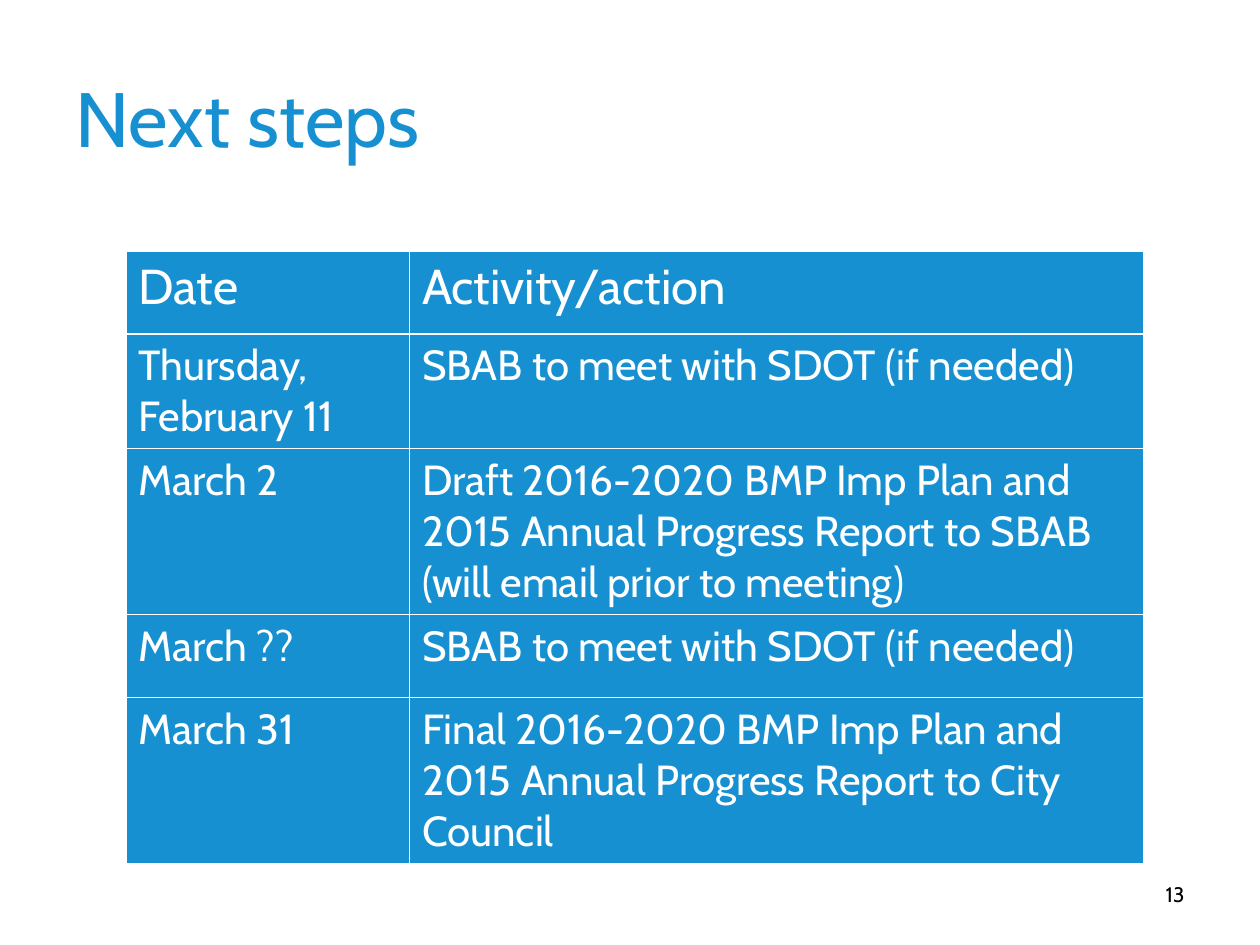
from lxml.etree import SubElement
from pptx import Presentation
from pptx.dml.color import RGBColor
from pptx.enum.text import MSO_ANCHOR, PP_ALIGN
from pptx.oxml.ns import qn
from pptx.util import Inches, Pt

TITLE = "Next steps"
PAGE_NUMBER = "13"
STEPS = [
    ("Date", "Activity/action"),
    ("Thursday, February 11", "SBAB to meet with SDOT (if needed)"),
    ("March 2", "Draft 2016-2020 BMP Imp Plan and 2015 Annual Progress Report "
                "to SBAB (will email prior to meeting)"),
    ("March ??", "SBAB to meet with SDOT (if needed)"),
    ("March 31", "Final 2016-2020 BMP Imp Plan and 2015 Annual Progress Report "
                 "to City Council"),
]
COLUMN_WIDTHS = [2.25, 5.83]
ROW_HEIGHTS = [0.66, 0.9, 1.3, 0.66, 1.31]
BLUE, WHITE, BLACK = "1690D0", "FFFFFF", "000000"


def color(value):
    """Turn a hex string into a colour."""
    return RGBColor.from_string(value)


def write(frame, text, size, ink, align=PP_ALIGN.LEFT, anchor=MSO_ANCHOR.TOP):
    """Put one formatted paragraph in a text frame."""
    frame.word_wrap = True
    frame.vertical_anchor = anchor
    para = frame.paragraphs[0]
    para.alignment = align
    span = para.add_run()
    span.text = text
    for name, value in {"name": "Cabin", "size": Pt(size), "bold": False}.items():
        setattr(span.font, name, value)
    span.font.color.rgb = color(ink)


def place(shape, left, top, width, height):
    """Set a shape's position and size in inches."""
    box = {"left": left, "top": top, "width": width, "height": height}
    for name, value in box.items():
        setattr(shape, name, Inches(value))


def outline(cell, ink, width):
    """Draw all four borders of a table cell."""
    properties = cell._tc.get_or_add_tcPr()
    for position, side in enumerate(("lnL", "lnR", "lnT", "lnB")):
        line = SubElement(properties, qn(f"a:{side}"), w=str(Pt(width)))
        fill = SubElement(line, qn("a:solidFill"))
        SubElement(fill, qn("a:srgbClr"), val=ink)
        properties.insert(position, line)


def add_steps(page):
    """Add the table of dates and activities."""
    table = page.shapes.add_table(
        len(STEPS), len(COLUMN_WIDTHS), Inches(1), Inches(1.99),
        Inches(sum(COLUMN_WIDTHS)), Inches(sum(ROW_HEIGHTS))).table
    for column, width in zip(table.columns, COLUMN_WIDTHS):
        column.width = Inches(width)
    for index, (row, height, texts) in enumerate(zip(table.rows, ROW_HEIGHTS, STEPS)):
        row.height = Inches(height)
        for cell, text in zip(row.cells, texts):
            cell.fill.solid()
            cell.fill.fore_color.rgb = color(BLUE)
            outline(cell, WHITE, 1)
            write(cell.text_frame, text, 24 if index else 28, WHITE)


def main():
    """Build and save the slide."""
    deck = Presentation()
    deck.slide_width, deck.slide_height = Inches(10), Inches(7.5)
    page = deck.slides.add_slide(deck.slide_layouts[5])
    title = page.shapes.title
    place(title, 0.5, 0.3, 9, 1.25)
    write(title.text_frame, TITLE, 44, BLUE, anchor=MSO_ANCHOR.MIDDLE)
    add_steps(page)
    number = page.shapes.add_textbox(0, 0, 0, 0)
    place(number, 7.17, 6.95, 2.33, 0.4)
    write(number.text_frame, PAGE_NUMBER, 12, BLACK, PP_ALIGN.RIGHT)
    deck.save("out.pptx")


if __name__ == "__main__":
    main()
